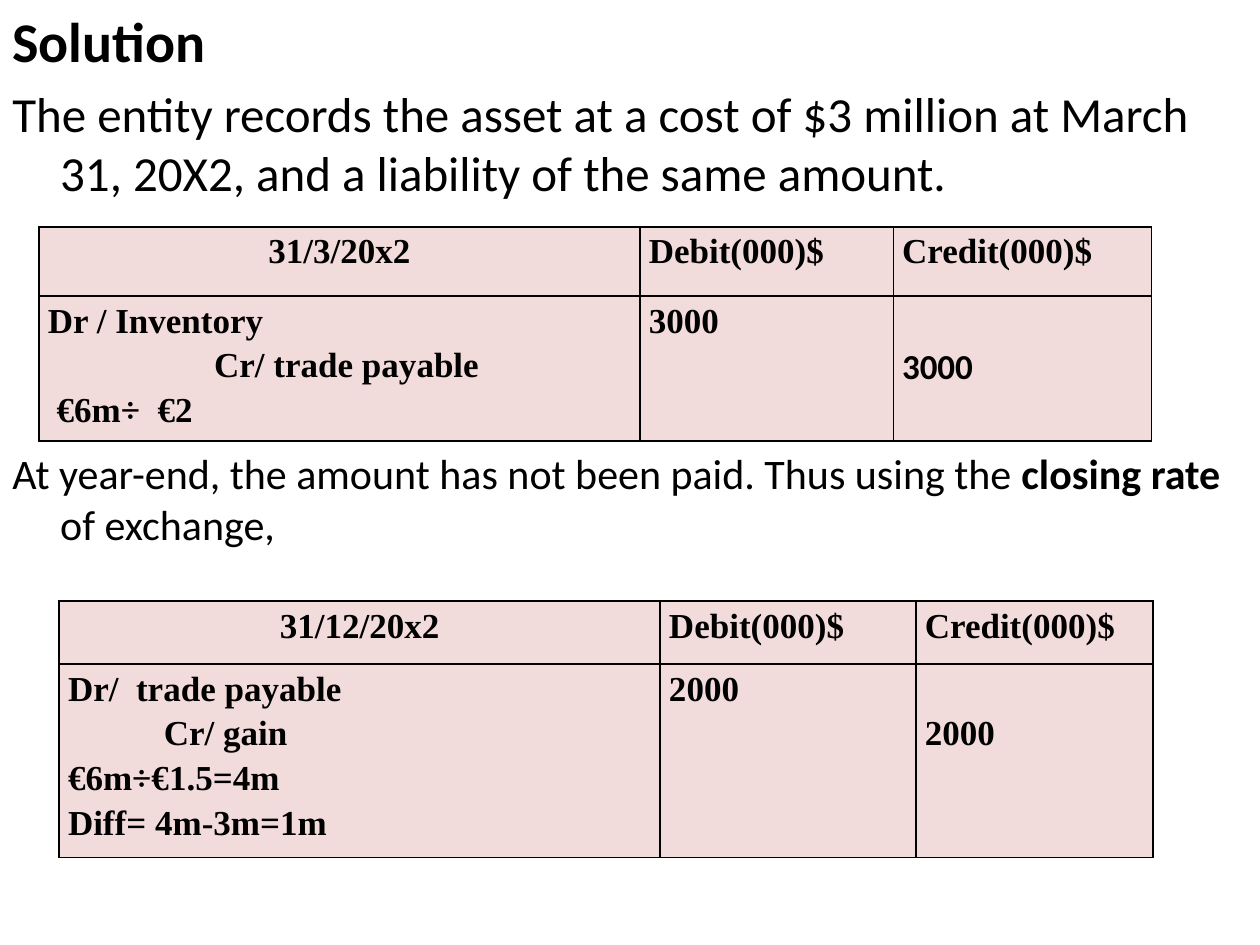
from lxml import etree
from pptx import Presentation
from pptx.dml.color import RGBColor
from pptx.enum.text import PP_ALIGN
from pptx.oxml.ns import qn
from pptx.util import Inches, Pt

CENTER, LEFT = PP_ALIGN.CENTER, PP_ALIGN.LEFT
COLORS = {"ink": "000000", "cell": "F2DCDB"}
BODY_FONT, TABLE_FONT = "Calibri", "Times New Roman"
LINE_HEIGHT = 0.35


def add_run(paragraph, text, size, bold, font):
    run = paragraph.add_run()
    run.text = text
    run.font.size = Pt(size)
    run.font.bold = bold
    run.font.name = font
    run.font.color.rgb = RGBColor.from_string(COLORS["ink"])


def style_cell(cell):
    """Give a cell its fill, margins and thin border on all sides."""
    cell.fill.solid()
    cell.fill.fore_color.rgb = RGBColor.from_string(COLORS["cell"])
    cell.margin_left = cell.margin_right = Inches(0.07)
    cell.margin_top = cell.margin_bottom = Inches(0)
    properties = cell._tc.get_or_add_tcPr()
    for position, side in enumerate(("lnL", "lnR", "lnT", "lnB")):
        border = etree.Element(qn(f"a:{side}"), w=str(Pt(1)))
        fill = etree.SubElement(border, qn("a:solidFill"))
        etree.SubElement(fill, qn("a:srgbClr"), val=COLORS["ink"])
        properties.insert(position, border)


prs = Presentation()
prs.slide_width, prs.slide_height = Inches(10), Inches(7.5)
slide = prs.slides.add_slide(prs.slide_layouts[6])

# Solution text: space before in points, size, runs of (text, bold)
statements = [
    (0, 32, [("Solution", True)]),
    (5.6, 28, [("The entity records the asset at a cost of $3 million at March "
                "31, 20X2, and a liability of the same amount.", False)]),
    (141, 24, [("At year-end, the amount has not been paid. Thus using the ", False),
               ("closing rate", True), (" of exchange,", False)]),
]
solution = slide.shapes.add_textbox(Inches(0), Inches(0), Inches(10), Inches(7.5)).text_frame
solution.word_wrap = True
for index, (space, size, runs) in enumerate(statements):
    paragraph = solution.add_paragraph() if index else solution.paragraphs[0]
    paragraph.space_before = Pt(space)
    indent = paragraph._p.get_or_add_pPr()
    indent.set("marL", str(Inches(0.38)))
    indent.set("indent", str(Inches(-0.38)))
    for text, bold in runs:
        add_run(paragraph, text, size, bold, BODY_FONT)

# Journal entries: lines are (text, left indent in inches)
journals = [
    {"at": (0.31, 1.8), "columns": (4.77, 2.01, 2.05), "rows": (0.55, 1.06),
     "date": "31/3/20x2", "amount": "3000", "credit_font": BODY_FONT,
     "lines": [("Dr / Inventory", 0), ("Cr/ trade payable", 1.32), ("€6m÷  €2", 0.07)]},
    {"at": (0.47, 4.77), "columns": (4.77, 2.03, 1.88), "rows": (0.5, 1.41),
     "date": "31/12/20x2", "amount": "2000", "credit_font": TABLE_FONT,
     "lines": [("Dr/  trade payable", 0), ("Cr/ gain", 0.76),
               ("€6m÷€1.5=4m", 0), ("Diff= 4m-3m=1m", 0)]},
]
for journal in journals:
    left, top = journal["at"]
    columns, rows = journal["columns"], journal["rows"]
    table = slide.shapes.add_table(
        len(rows), len(columns), Inches(left), Inches(top),
        Inches(sum(columns)), Inches(sum(rows))).table
    for column, width in zip(table.columns, columns):
        column.width = Inches(width)
    for row, height in zip(table.rows, rows):
        row.height = Inches(height)

    amount = [(journal["amount"], 0)]
    contents = [
        [[(journal["date"], 0)], [("Debit(000)$", 0)], [("Credit(000)$", 0)]],
        [journal["lines"], amount, amount],
    ]
    for r, row_contents in enumerate(contents):
        for c, lines in enumerate(row_contents):
            cell = table.cell(r, c)
            style_cell(cell)
            is_credit = (r, c) == (1, 2)
            if is_credit:
                cell.margin_top = Inches(LINE_HEIGHT)  # level with the Cr line
            for index, (text, indent) in enumerate(lines):
                frame = cell.text_frame
                paragraph = frame.add_paragraph() if index else frame.paragraphs[0]
                paragraph.alignment = CENTER if (r, c) == (0, 0) else LEFT
                paragraph.line_spacing = 1.15
                paragraph._p.get_or_add_pPr().set("marL", str(Inches(indent)))
                add_run(paragraph, text, 20, True,
                        journal["credit_font"] if is_credit else TABLE_FONT)

prs.save("out.pptx")
